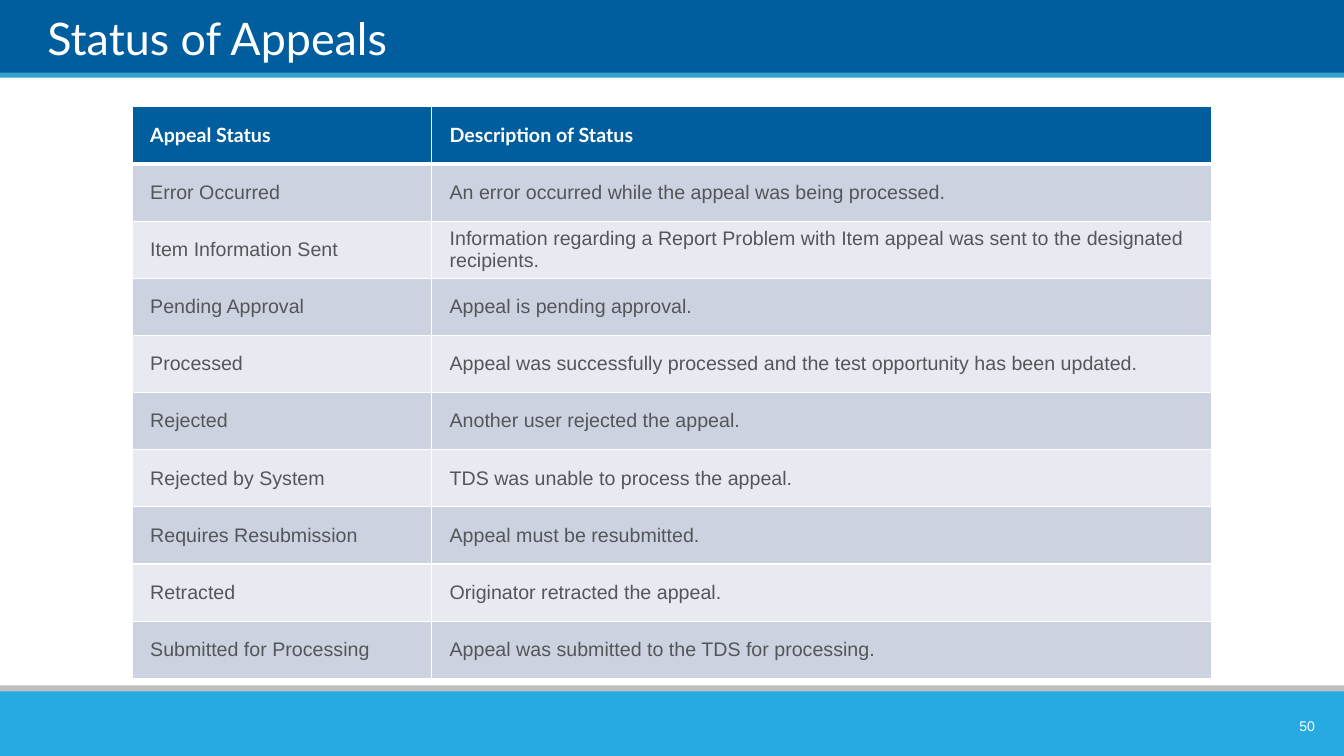
from lxml import etree
from pptx import Presentation
from pptx.dml.color import RGBColor
from pptx.enum import shapes, text
from pptx.oxml import ns
from pptx.util import Inches, Pt

WHITE, NAVY, GREY = "FFFFFF", "005E9E", "53565A"
ROW_FILLS = ("E7EAF0", "CCD2DF")
BANDS = [  # top, height, colour
    (-0.01, 0.75, NAVY),
    (0.72, 0.05, "35A0CE"),
    (6.8, 0.14, "BFBFBF"),
    (6.86, 0.64, "27AAE1"),
]
STATUSES = [
    ("Appeal Status", "Description of Status"),
    ("Error Occurred", "An error occurred while the appeal was being processed."),
    ("Item Information Sent", "Information regarding a Report Problem with Item appeal "
                              "was sent to the designated recipients."),
    ("Pending Approval", "Appeal is pending approval."),
    ("Processed", "Appeal was successfully processed and the test opportunity has been updated."),
    ("Rejected", "Another user rejected the appeal."),
    ("Rejected by System", "TDS was unable to process the appeal."),
    ("Requires Resubmission", "Appeal must be resubmitted."),
    ("Retracted", "Originator retracted the appeal."),
    ("Submitted for Processing", "Appeal was submitted to the TDS for processing."),
]
COLUMN_WIDTHS = (2.97, 7.74)
ROW_HEIGHT = 0.567


def rgb(colour):
    return RGBColor.from_string(colour)


def set_attributes(target, values):
    for name, value in values.items():
        setattr(target, name, value)


def place(shape, left, top, width, height):
    set_attributes(shape, {"left": Inches(left), "top": Inches(top),
                           "width": Inches(width), "height": Inches(height)})


def write(frame, content, colour, font, alignment=text.PP_ALIGN.LEFT):
    """Put one formatted paragraph into a text frame."""
    frame.text = content
    paragraph = frame.paragraphs[0]
    paragraph.alignment = alignment
    set_attributes(paragraph.font, font)
    paragraph.font.color.rgb = rgb(colour)
    return paragraph


def add_band(slide, width, top, height, colour):
    band = slide.shapes.add_shape(shapes.MSO_SHAPE.RECTANGLE, 0, Inches(top),
                                  width, Inches(height))
    band.shadow.inherit = False
    band.fill.solid()
    band.fill.fore_color.rgb = rgb(colour)
    band.line.fill.background()


def format_title(title):
    place(title, 0.47, 0.07, 12.05, 0.57)
    frame = title.text_frame
    set_attributes(frame, {"margin_left": 0, "margin_top": 0, "margin_right": 0,
                           "margin_bottom": 0, "word_wrap": True,
                           "auto_size": text.MSO_AUTO_SIZE.NONE,
                           "vertical_anchor": text.MSO_ANCHOR.BOTTOM})
    write(frame, "Status of Appeals", WHITE, {"name": "Lato", "size": Pt(32)})
    # Bring the title in front of the bands
    title.element.getparent().append(title.element)


def add_borders(cell, widths):
    """Draw white cell borders, with widths in points by side."""
    properties = cell._tc.get_or_add_tcPr()
    for side, width in widths.items():
        line = etree.SubElement(properties, ns.qn(f"a:ln{side}"), w=str(Pt(width)))
        fill = etree.SubElement(line, ns.qn("a:solidFill"))
        etree.SubElement(fill, ns.qn("a:srgbClr"), val=WHITE)


def fill_cell(cell, content, row):
    header = row == 0
    add_borders(cell, {"L": 1, "R": 1, "T": 3 if row == 1 else 1, "B": 3 if header else 1})
    cell.fill.solid()
    cell.fill.fore_color.rgb = rgb(NAVY if header else ROW_FILLS[row % 2])
    cell.vertical_anchor = text.MSO_ANCHOR.MIDDLE
    cell.margin_left = Inches(0.18)
    font = {"name": "Lato" if header else "Arial", "size": Pt(14), "bold": header}
    paragraph = write(cell.text_frame, content, WHITE if header else GREY, font)
    paragraph.space_after = Pt(4)


def add_status_table(slide):
    frame = slide.shapes.add_table(len(STATUSES), len(COLUMN_WIDTHS), Inches(1.31), Inches(1.06),
                                   Inches(sum(COLUMN_WIDTHS)), Inches(ROW_HEIGHT * len(STATUSES)))
    table = frame.table
    for column, width in zip(table.columns, COLUMN_WIDTHS):
        column.width = Inches(width)
    for row, contents in enumerate(STATUSES):
        table.rows[row].height = Inches(ROW_HEIGHT)
        for column, content in enumerate(contents):
            fill_cell(table.cell(row, column), content, row)


def add_page_number(slide, number):
    box = slide.shapes.add_textbox(Inches(12.37), Inches(7.05), Inches(0.77), Inches(0.3))
    frame = box.text_frame
    set_attributes(frame, {"word_wrap": True, "vertical_anchor": text.MSO_ANCHOR.MIDDLE})
    write(frame, number, WHITE, {"name": "Arial", "size": Pt(10)}, text.PP_ALIGN.RIGHT)


def main():
    presentation = Presentation()
    set_attributes(presentation, {"slide_width": Inches(13.33), "slide_height": Inches(7.5)})
    slide = presentation.slides.add_slide(presentation.slide_layouts[5])
    for band in BANDS:
        add_band(slide, presentation.slide_width, *band)
    format_title(slide.shapes.title)
    add_status_table(slide)
    add_page_number(slide, "50")
    presentation.save("out.pptx")


if __name__ == "__main__":
    main()
